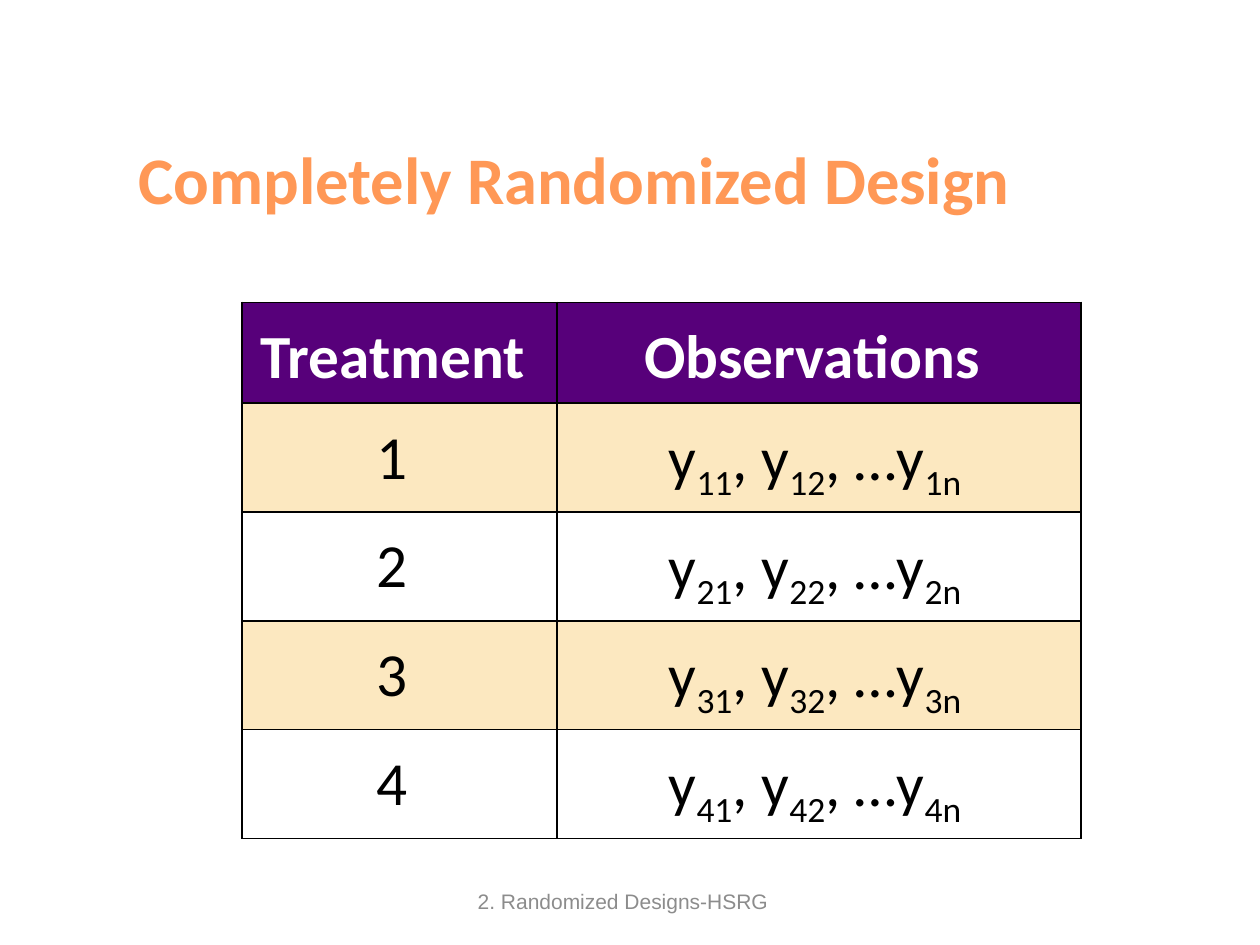
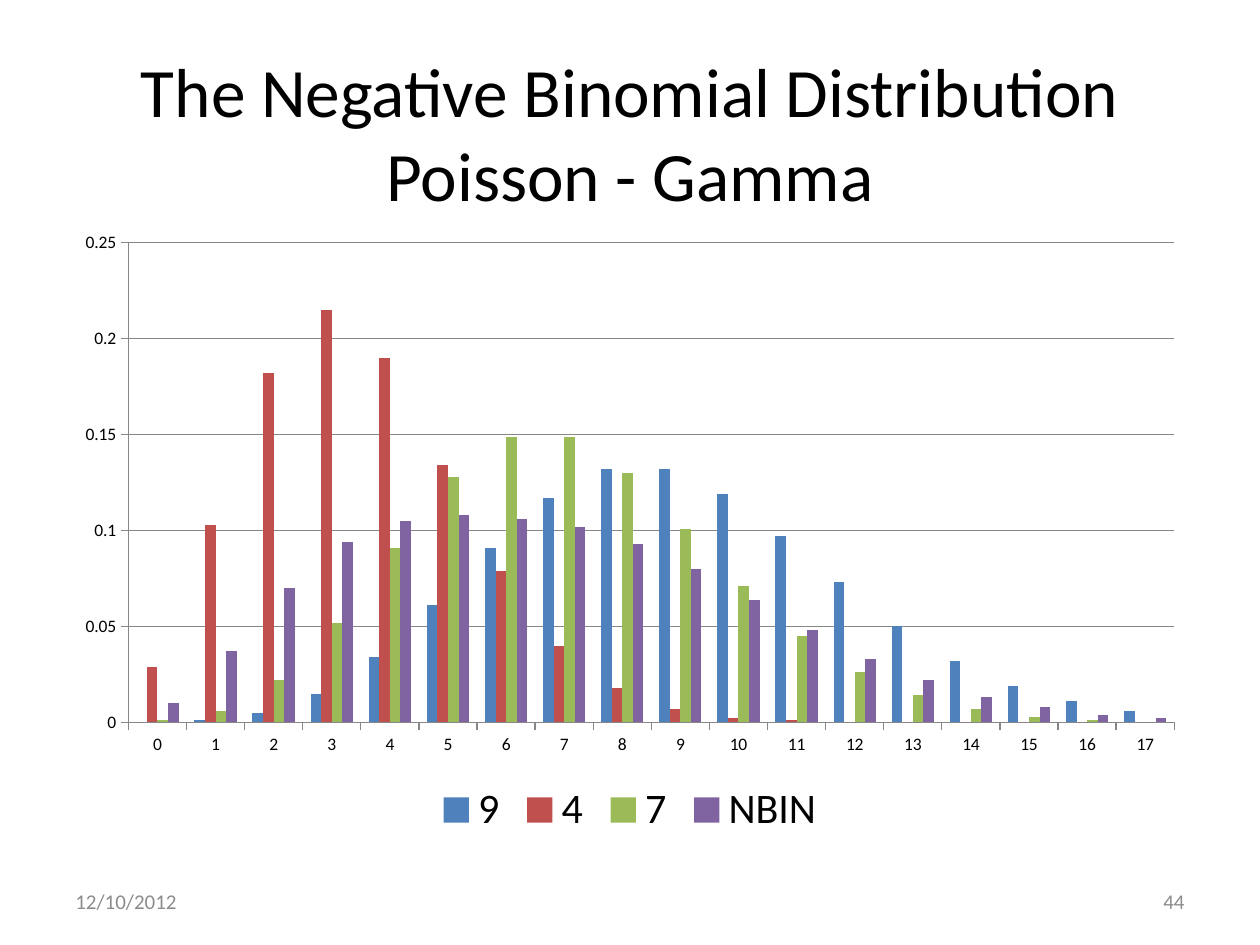
"""Builds two slides: a completely randomized design table and a negative binomial chart."""
import dataclasses

import lxml.etree
import pptx
import pptx.chart.data
import pptx.dml.color
import pptx.enum.chart
import pptx.enum.text
import pptx.oxml
import pptx.oxml.ns
import pptx.util

Inches = pptx.util.Inches
Align = pptx.enum.text.PP_ALIGN


@dataclasses.dataclass(frozen=True)
class Theme:
    font: str = "Calibri"
    footer_font: str = "Arial"
    ink: str = "000000"
    white: str = "FFFFFF"
    orange: str = "FF9856"
    purple: str = "57007A"
    cream: str = "FCE8C0"
    grey: str = "8C8C8C"
    axis: str = "878787"
    series: tuple = ("4F81BD", "C0504D", "9BBB59", "8064A2")
    design_title: float = 38
    title: float = 39.6
    table: float = 35
    footer: float = 12
    chart: float = 10
    legend: float = 24


def rgb(code):
    return pptx.dml.color.RGBColor.from_string(code)


class Deck:
    def __init__(self, theme):
        self.theme = theme
        self.presentation = pptx.Presentation()
        self.presentation.slide_width = Inches(10)
        self.presentation.slide_height = Inches(7.5)
        self.slide = None

    def new_slide(self):
        self.slide = self.presentation.slides.add_slide(self.presentation.slide_layouts[6])

    def style(self, font, size, color, bold=False, name=None):
        font.name = name or self.theme.font
        font.size = pptx.util.Pt(size)
        font.bold = bold
        font.color.rgb = rgb(color)

    def text(self, words, box, size, color, align=Align.LEFT, bold=False, name=None):
        frame = self.slide.shapes.add_textbox(*map(Inches, box)).text_frame
        frame.word_wrap = True
        frame.vertical_anchor = pptx.enum.text.MSO_ANCHOR.MIDDLE
        paragraph = frame.paragraphs[0]
        paragraph.text = words
        paragraph.alignment = align
        self.style(paragraph.font, size, color, bold, name)

    def footer(self, words, left, width, align, name=None):
        self.text(words, (left, 6.95, width, 0.4), self.theme.footer, self.theme.grey,
                  align, name=name)

    def borders(self, cell):
        properties = cell._tc.get_or_add_tcPr()
        for position, side in enumerate(("lnL", "lnR", "lnT", "lnB")):
            line = pptx.oxml.parse_xml(
                f'<a:{side} {pptx.oxml.ns.nsdecls("a")} w="12700"><a:solidFill>'
                f'<a:srgbClr val="{self.theme.ink}"/></a:solidFill></a:{side}>')
            properties.insert(position, line)

    def cell(self, cell, pieces, fill, color, bold):
        """Fills a cell; every second piece is a subscript."""
        paragraph = cell.text_frame.paragraphs[0]
        paragraph.alignment = Align.CENTER
        paragraph.line_spacing = 1.15
        self.style(paragraph.font, self.theme.table, color, bold)
        for index, piece in enumerate(pieces):
            run = paragraph.add_run()
            run.text = piece
            if index % 2:
                run._r.get_or_add_rPr().set("baseline", "-25000")
        if fill:
            cell.fill.solid()
            cell.fill.fore_color.rgb = rgb(fill)
        else:
            cell.fill.background()
        self.borders(cell)

    def table(self, rows, left, top, widths, row_height):
        theme = self.theme
        grid = self.slide.shapes.add_table(
            len(rows), len(widths), Inches(left), Inches(top),
            Inches(sum(widths)), Inches(row_height * len(rows))).table
        grid.first_row = grid.horz_banding = False
        for column, width in zip(grid.columns, widths):
            column.width = Inches(width)
        for r, row in enumerate(rows):
            header = r == 0
            fill = theme.purple if header else theme.cream if r % 2 else None
            for c, pieces in enumerate(row):
                self.cell(grid.cell(r, c), pieces, fill,
                          theme.white if header else theme.ink, header)

    def column_chart(self, categories, series, box):
        theme = self.theme
        data = pptx.chart.data.CategoryChartData()
        data.categories = categories
        for name, values in series.items():
            data.add_series(name, values)
        chart = self.slide.shapes.add_chart(
            pptx.enum.chart.XL_CHART_TYPE.COLUMN_CLUSTERED, *map(Inches, box), data).chart
        self.style(chart.font, theme.chart, theme.ink)
        chart.has_title = False
        chart.has_legend = True
        chart.legend.position = pptx.enum.chart.XL_LEGEND_POSITION.BOTTOM
        chart.legend.include_in_layout = False
        self.style(chart.legend.font, theme.legend, theme.ink)

        plot = chart.plots[0]
        plot.gap_width = 150
        plot.overlap = 0
        plot.vary_by_categories = False
        for bars, color in zip(plot.series, theme.series):
            bars.format.fill.solid()
            bars.format.fill.fore_color.rgb = rgb(color)

        probability = chart.value_axis
        probability.minimum_scale = 0
        probability.maximum_scale = 0.25
        probability.major_unit = 0.05
        probability.has_major_gridlines = True
        for axis in (chart.category_axis, probability):
            axis.major_tick_mark = pptx.enum.chart.XL_TICK_MARK.OUTSIDE
            axis.format.line.color.rgb = rgb(theme.axis)
        probability.major_gridlines.format.line.color.rgb = rgb(theme.axis)


def randomized_design(deck):
    theme = deck.theme
    deck.new_slide()
    deck.text("Completely Randomized Design", (1, 1, 8.42, 0.83),
              theme.design_title, theme.orange, bold=True)
    deck.footer("2. Randomized Designs-HSRG", 3.36, 3.17, Align.CENTER, theme.footer_font)
    rows = [(["Treatment "], ["Observations "])]
    for treatment in range(1, 5):
        rows.append(([f"{treatment} "],
                     ["y", f"{treatment}1", ", y", f"{treatment}2", ", …y", f"{treatment}n "]))
    deck.table(rows, 1.92, 2.4, (2.5, 4.16), 0.8)


def negative_binomial(deck):
    theme = deck.theme
    deck.new_slide()
    deck.text("The Negative Binomial Distribution\vPoisson - Gamma", (0.5, 0.42, 9, 1.25),
              theme.title, theme.ink, Align.CENTER)
    deck.footer("12/10/2012", 0.5, 2.33, Align.LEFT)
    deck.footer("44", 7.17, 2.33, Align.RIGHT)
    probabilities = {
        "9": (0, 0.001, 0.005, 0.015, 0.034, 0.061, 0.091, 0.117, 0.132,
              0.132, 0.119, 0.097, 0.073, 0.05, 0.032, 0.019, 0.011, 0.006),
        "4": (0.029, 0.103, 0.182, 0.215, 0.19, 0.134, 0.079, 0.04, 0.018,
              0.007, 0.002, 0.001, 0, 0, 0, 0, 0, None),
        "7": (0.001, 0.006, 0.022, 0.052, 0.091, 0.128, 0.149, 0.149, 0.13,
              0.101, 0.071, 0.045, 0.026, 0.014, 0.007, 0.003, 0.001, None),
        "NBIN": (0.01, 0.037, 0.07, 0.094, 0.105, 0.108, 0.106, 0.102, 0.093,
                 0.08, 0.064, 0.048, 0.033, 0.022, 0.013, 0.008, 0.004, 0.002),
    }
    deck.column_chart([str(count) for count in range(18)], probabilities, (0.5, 1.75, 9, 4.95))


def main():
    deck = Deck(Theme())
    randomized_design(deck)
    negative_binomial(deck)
    deck.presentation.save("out.pptx")


if __name__ == "__main__":
    main()
